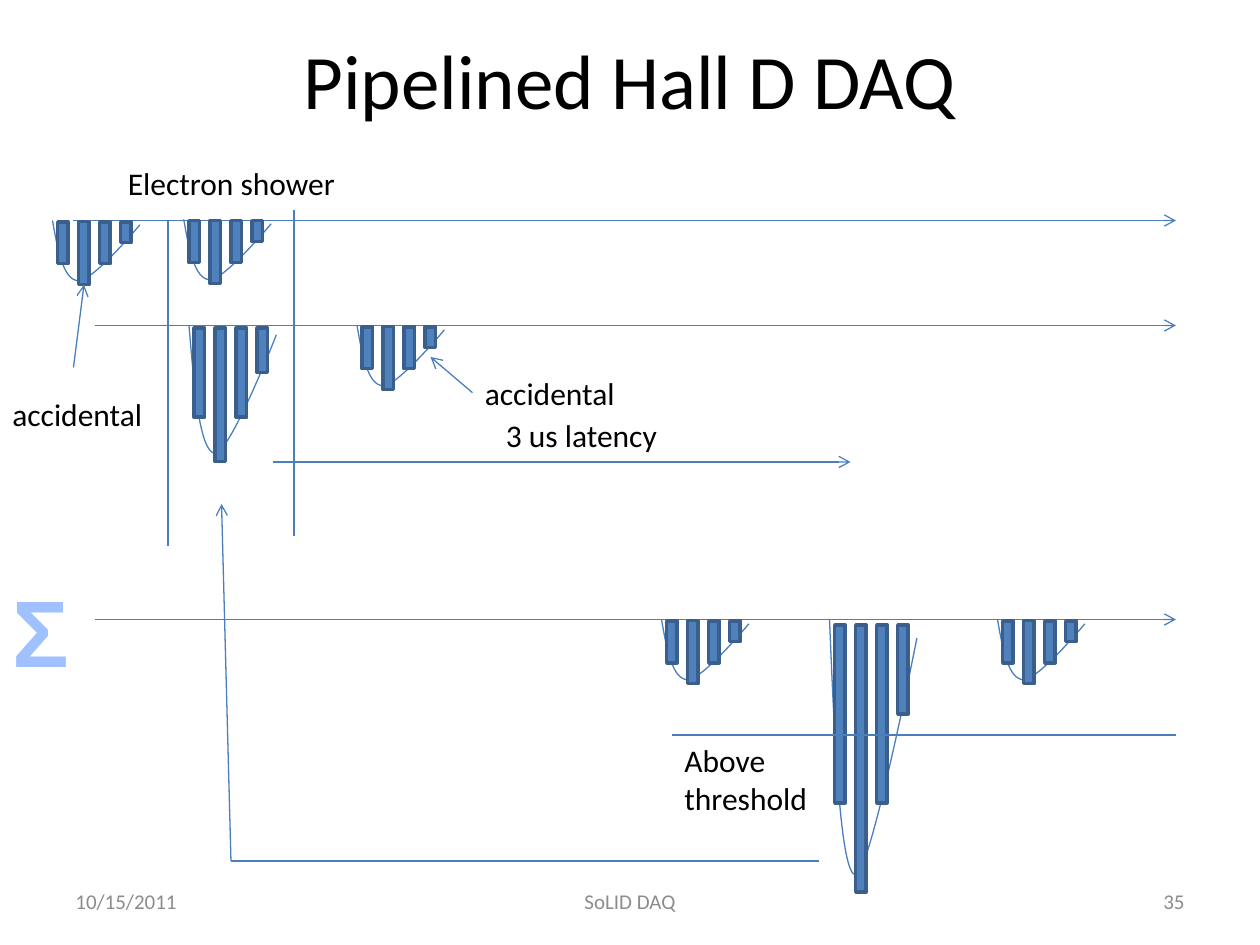
from lxml import etree
from pptx import Presentation
from pptx.dml.color import RGBColor
from pptx.enum.shapes import MSO_CONNECTOR as Connector, MSO_SHAPE as Shape
from pptx.enum.text import MSO_ANCHOR as Anchor, MSO_AUTO_SIZE as AutoSize, PP_ALIGN as Align
from pptx.oxml.ns import qn
from pptx.util import Inches, Pt

TITLE = "Pipelined Hall D DAQ"
COLUMNS, ROWS = 120, 90
LINE, BAR, BAR_EDGE, GRAY = "4B7EBC", "4F81BD", "3A5F8C", "8C8C8C"

ARROWS = [
    ((7, 21), (112, 21)),
    ((9, 31), (112, 31)),
    ((9, 59), (112, 59)),
    ((26, 44), (81, 44)),
    ((22, 82), (21.1, 48)),
]
PLAIN_LINES = [
    ((64, 70), (112, 70)),
    ((78, 82), (22, 82)),
    ((16, 21), (16, 52)),
    ((28, 20), (28, 51)),
]
PULSES = {
    "shower, channel 1": (17.5, 20.9, 1),
    "accidental, channel 1": (5, 21, 1),
    "accidental, channel 2": (34, 31, 1),
    "shower, channel 2": (18, 31, 2.12),
    "late accidental, sum": (95, 59, 1),
    "shower, sum": (79, 59, 4.24),
    "early accidental, sum": (63, 59, 1),
}
BAR_HEIGHTS = [4, 6, 4, 2]
ENVELOPE = [(0, 0), (0.5, 2.85), (1.04, 5.67), (2.46, 5.74), (3.85, 5.8), (8.32, 0.42), (8.32, 0.42)]
LABELS = {
    "latency": ("3 us latency", (47, 39, 17, 4.8)),
    "threshold": ("Above\nthreshold", (64, 70, 14.3, 8.5)),
    "shower": ("Electron shower", (11, 15, 22.3, 4.8)),
    "right accidental": ("accidental", (45, 35, 14.9, 4.8)),
    "left accidental": ("accidental", (0, 37, 14.9, 4.8)),
}
FOOTERS = [
    ("10/15/2011", (6, 83.4, 28, 4.8), Align.LEFT),
    ("35", (86, 83.4, 28, 4.8), Align.RIGHT),
    ("SoLID DAQ", (41, 83.4, 38, 4.8), Align.CENTER),
]

presentation = Presentation()
presentation.slide_width, presentation.slide_height = Inches(10), Inches(7.5)
slide = presentation.slides.add_slide(presentation.slide_layouts[5])
shapes = slide.shapes


def place(*grid):
    units = (presentation.slide_width / COLUMNS, presentation.slide_height / ROWS)
    return [round(value * units[index % 2]) for index, value in enumerate(grid)]


def color(value):
    return RGBColor.from_string(value)


def set_line(line, value, width):
    line.color.rgb = color(value)
    line.width = Pt(width)


def write(shape, text, size=18, font="Calibri", fill="000000", bold=False,
          align=Align.LEFT, anchor=Anchor.TOP, wrap=False):
    frame = shape.text_frame
    frame.text = text
    frame.word_wrap = wrap
    frame.auto_size = AutoSize.NONE if wrap else AutoSize.SHAPE_TO_FIT_TEXT
    frame.vertical_anchor = anchor
    for paragraph in frame.paragraphs:
        paragraph.alignment = align
        for run in paragraph.runs:
            run.font.size, run.font.name, run.font.bold = Pt(size), font, bold
            run.font.color.rgb = color(fill)


def add_text(text, box, **style):
    shape = shapes.add_textbox(*place(*box))
    write(shape, text, **style)
    return shape


def add_line(start, end, arrow=False):
    connector = shapes.add_connector(Connector.STRAIGHT, *place(*start, *end))
    set_line(connector.line, LINE, 0.75)
    properties = connector.element.spPr
    if arrow:
        etree.SubElement(properties.find(qn("a:ln")), qn("a:tailEnd"), type="arrow")
    etree.SubElement(properties, qn("a:effectLst"))
    return connector


def add_envelope(group, left, top, scale):
    points = [tuple(place(left + x, top + y * scale)) for x, y in ENVELOPE]
    builder = group.shapes.build_freeform(*points[0])
    builder.add_line_segments(points[1:], close=False)
    curve = builder.convert_to_shape()
    outline = curve.element.find(".//" + qn("a:path"))
    segments = outline.findall(qn("a:lnTo"))
    for first in range(0, len(segments), 3):
        bezier = etree.SubElement(outline, qn("a:cubicBezTo"))
        for segment in segments[first:first + 3]:
            bezier.append(segment[0])
            outline.remove(segment)
    curve.fill.background()
    curve.shadow.inherit = False
    set_line(curve.line, LINE, 0.75)


def add_pulse(left, top, scale):
    group = shapes.add_group_shape()
    add_envelope(group, left, top, scale)
    bars = []
    for index, height in enumerate(BAR_HEIGHTS):
        box = place(left + 0.5 + 2 * index, top + 0.12 * scale, 1, height * scale)
        bar = group.shapes.add_shape(Shape.RECTANGLE, *box)
        bar.shadow.inherit = False
        bar.fill.solid()
        bar.fill.fore_color.rgb = color(BAR)
        set_line(bar.line, BAR_EDGE, 2)
        bars.append(bar)
    return bars


title = shapes.title
title.left, title.top, title.width, title.height = place(6, 0, 108, 15)
write(title, TITLE, size=44, align=Align.CENTER, anchor=Anchor.MIDDLE, wrap=True)

for start, end in ARROWS:
    add_line(start, end, arrow=True)
pulses = {name: add_pulse(*pulse) for name, pulse in PULSES.items()}
for start, end in PLAIN_LINES:
    add_line(start, end)

add_text("Σ", (0, 54, 7.8, 12.1), size=54, font="Arial", fill="A0C1FF", bold=True, align=Align.CENTER)
labels = {name: add_text(*label) for name, label in LABELS.items()}

right_pointer = add_line((45, 37.4), (41, 34), arrow=True)
right_pointer.begin_connect(labels["right accidental"], 1)
left_pointer = add_line((7, 35), (8, 27.1), arrow=True)
left_pointer.end_connect(pulses["accidental, channel 1"][1], 2)

for text, box, align in FOOTERS:
    add_text(text, box, size=12, fill=GRAY, align=align, anchor=Anchor.MIDDLE, wrap=True)

presentation.save("out.pptx")
